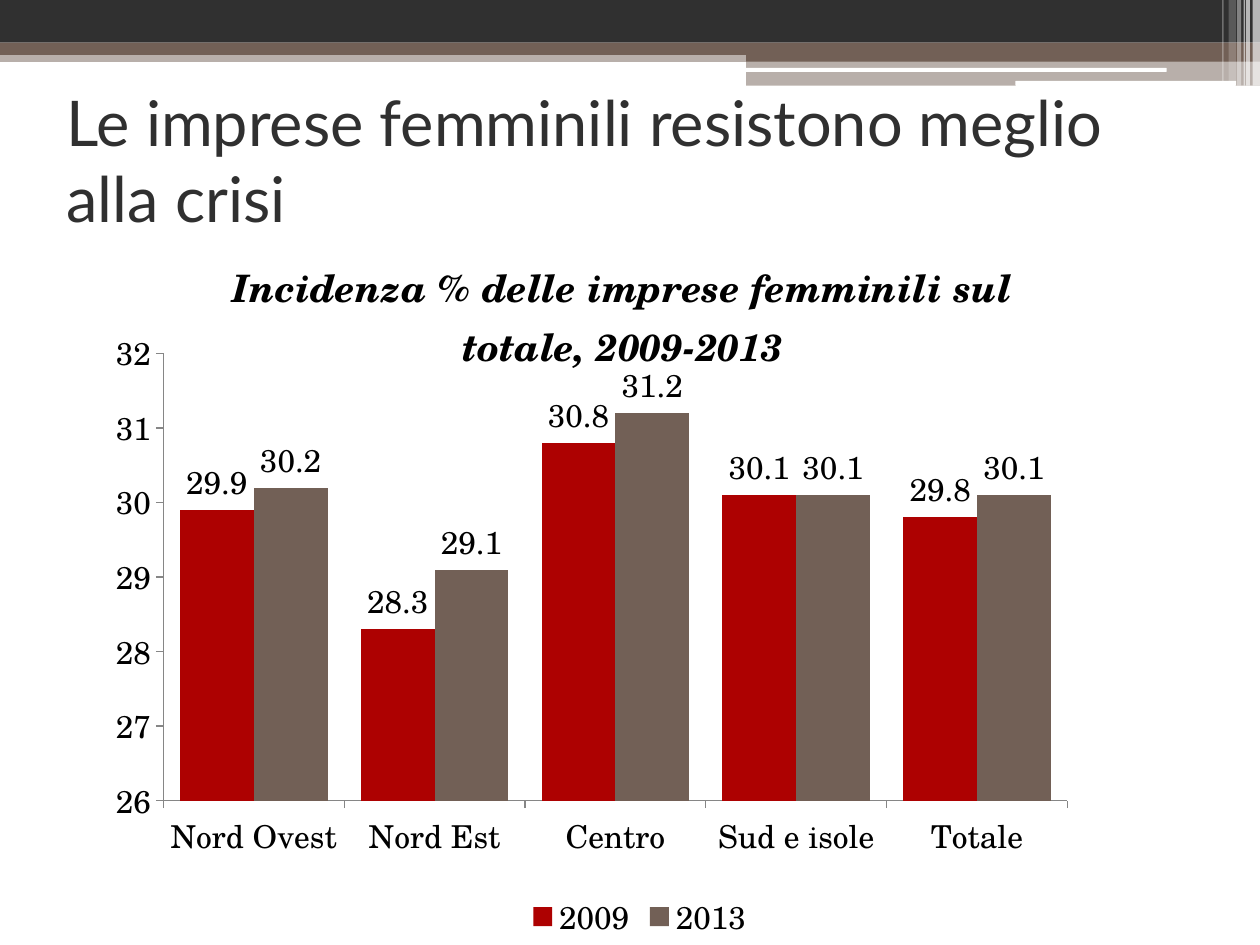
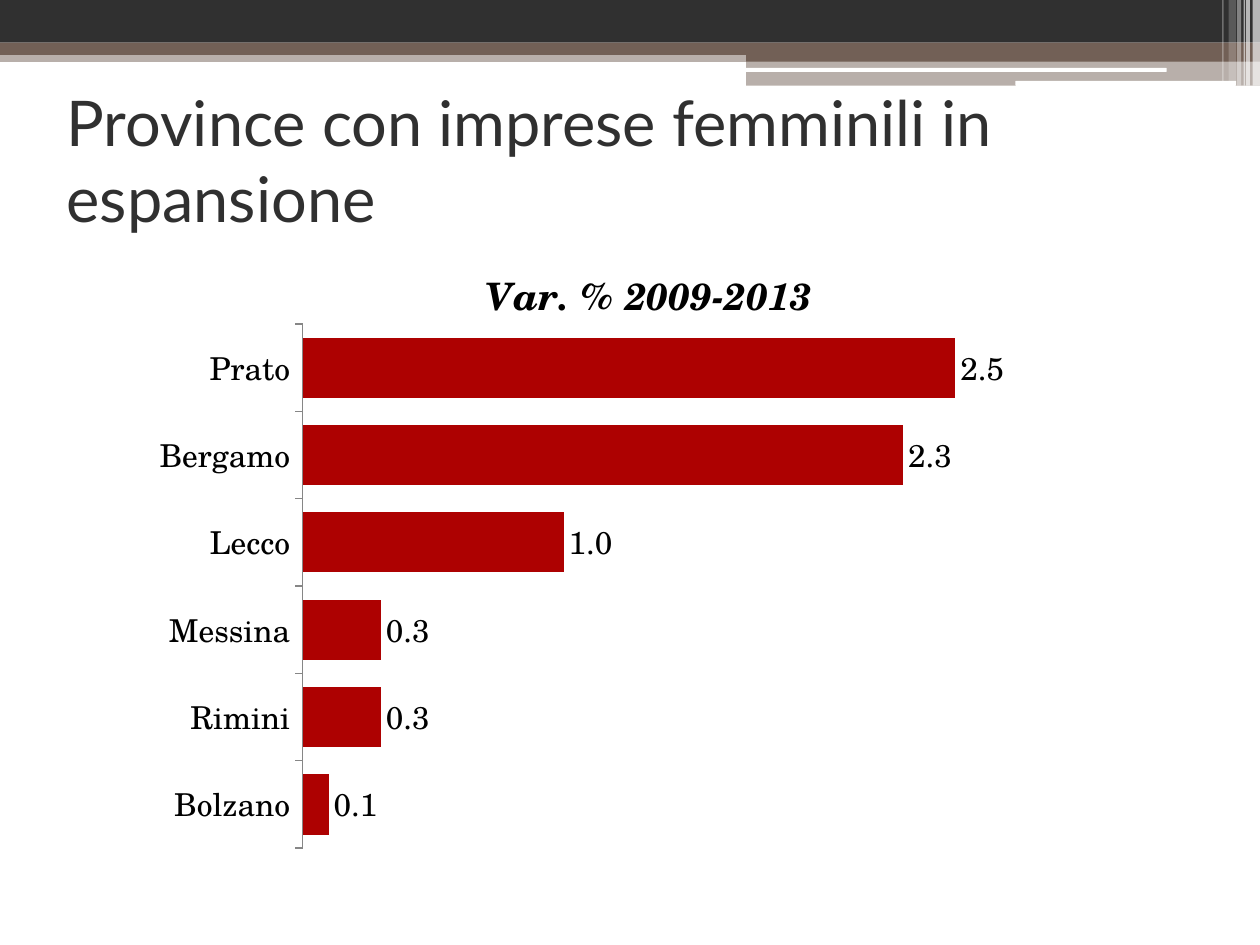
from dataclasses import dataclass

from lxml import etree
from pptx import Presentation
from pptx.chart.chart import Chart
from pptx.chart.data import CategoryChartData
from pptx.dml.color import RGBColor
from pptx.enum.chart import XL_CHART_TYPE as ChartType
from pptx.enum.chart import XL_LABEL_POSITION as LabelPosition
from pptx.enum.chart import XL_LEGEND_POSITION as LegendPosition
from pptx.enum.chart import XL_TICK_MARK as TickMark
from pptx.enum.shapes import MSO_SHAPE as Preset
from pptx.enum.text import MSO_ANCHOR as Anchor
from pptx.enum.text import MSO_AUTO_SIZE as AutoSize
from pptx.enum.text import PP_ALIGN as Align
from pptx.oxml.ns import qn
from pptx.slide import Slide, SlideLayout
from pptx.util import Cm, Pt

COLOURS = {
    "dark": "303030",
    "brown": "726056",
    "red": "AD0101",
    "white": "FFFFFF",
    "black": "000000",
    "axis": "868686",
}
TITLE_FONT = "Lato"
CHART_FONT = "TeX Gyre Schola"


@dataclass(frozen=True)
class Band:
    """A header bar; lengths in cm, opacity in percent."""
    left: float
    top: float
    width: float
    height: float
    colour: str
    opacity: int = 100
    rounded: bool = False


@dataclass(frozen=True)
class ChartSlide:
    """Content of a slide; boxes are fractions of the chart's size."""
    title: str
    chart_title: str
    title_corner: tuple[float, float]
    kind: ChartType
    categories: tuple[str, ...]
    series: dict[str, tuple[float, ...]]
    plot_box: tuple[float, float, float, float]
    value_range: tuple[float, float]
    show_values_axis: bool


BANDS = (
    Band(0, 1.02, 25.4, 0.23, "brown", 50),
    Band(0, 0, 25.4, 0.86, "dark"),
    Band(0, 0.86, 25.4, 0.25, "brown"),
    Band(15.04, 0.99, 10.36, 0.25, "brown"),
    Band(15.04, 1.22, 10.36, 0.51, "brown", 50),
    Band(15.01, 1.37, 8.51, 0.08, "white", rounded=True),
    Band(20.47, 1.63, 4.45, 0.1, "white", rounded=True),
    Band(25.25, 0, 0.15, 1.73, "white", 65),
    Band(25.12, 0, 0.08, 1.73, "white", 65),
    Band(25.07, 0, 0.03, 1.73, "white", 60),
    Band(24.94, 0, 0.08, 1.73, "white", 40),
    Band(24.77, 0, 0.15, 1.63, "white", 20),
    Band(24.64, 0, 0.03, 1.63, "white", 30),
)

SLIDES = (
    ChartSlide(
        title="Le imprese femminili resistono meglio alla crisi",
        chart_title="Incidenza % delle imprese femminili sul totale, 2009-2013",
        title_corner=(0.14, 0.07),
        kind=ChartType.COLUMN_CLUSTERED,
        categories=("Nord Ovest", "Nord Est", "Centro", "Sud e isole", "Totale"),
        series={
            "2009": (29.9, 28.3, 30.8, 30.1, 29.8),
            "2013": (30.2, 29.1, 31.2, 30.1, 30.1),
        },
        plot_box=(0.086, 0.212, 0.786, 0.595),
        value_range=(26, 32),
        show_values_axis=True,
    ),
    ChartSlide(
        title="Province con imprese femminili in espansione",
        chart_title="Var. % 2009-2013",
        title_corner=(0.36, 0.08),
        kind=ChartType.BAR_CLUSTERED,
        categories=("Bolzano", "Rimini", "Messina", "Lecco", "Bergamo", "Prato"),
        series={"Var. %": (0.1, 0.3, 0.3, 1.0, 2.3, 2.5)},
        plot_box=(0.207, 0.173, 0.681, 0.697),
        value_range=(0, 3),
        show_values_axis=False,
    ),
)


def colour(name: str) -> RGBColor:
    return RGBColor.from_string(COLOURS[name])


def add_band(page: Slide, layout: SlideLayout, band: Band) -> None:
    """Draw a band on the page, then move it to the shared layout."""
    preset = Preset.ROUNDED_RECTANGLE if band.rounded else Preset.RECTANGLE
    shape = page.shapes.add_shape(
        preset, Cm(band.left), Cm(band.top), Cm(band.width), Cm(band.height))
    shape.shadow.inherit = False
    shape.line.fill.background()
    shape.fill.solid()
    shape.fill.fore_color.rgb = colour(band.colour)
    if band.opacity < 100:
        tint = shape.element.find(".//" + qn("a:srgbClr"))
        etree.SubElement(tint, qn("a:alpha"), val=str(band.opacity * 1000))
    layout.shapes.element.append(shape.element)


def set_title(page: Slide, text: str) -> None:
    title = page.shapes.title
    title.left, title.top = Cm(1.09), Cm(1.73)
    title.width, title.height = Cm(22.86), Cm(2.97)
    frame = title.text_frame
    frame.text = text
    frame.auto_size = AutoSize.NONE
    frame.vertical_anchor = Anchor.MIDDLE
    para = frame.paragraphs[0]
    para.alignment = Align.LEFT
    para.font.name = TITLE_FONT
    para.font.size = Pt(36)
    para.font.color.rgb = colour("dark")


def set_layout(parent: etree._Element, index: int, **values: object) -> None:
    """Give a chart part a manual layout, placed at the child index."""
    for old in parent.findall(qn("c:layout")):
        parent.remove(old)
    layout = etree.Element(qn("c:layout"))
    manual = etree.SubElement(layout, qn("c:manualLayout"))
    for tag, value in values.items():
        etree.SubElement(manual, qn(f"c:{tag}"), val=str(value))
    parent.insert(index, layout)


def style_chart_title(chart: Chart, content: ChartSlide) -> None:
    frame = chart.chart_title.text_frame
    frame.text = content.chart_title
    font = frame.paragraphs[0].font
    font.name = CHART_FONT
    font.size = Pt(21.6)
    font.bold = font.italic = True
    font.color.rgb = colour("black")
    left, top = content.title_corner
    set_layout(chart.chart_title.element, 1,
               xMode="edge", yMode="edge", x=left, y=top)


def style_axes(chart: Chart, content: ChartSlide) -> None:
    values = chart.value_axis
    values.minimum_scale, values.maximum_scale = content.value_range
    values.major_unit = 1
    values.has_major_gridlines = False
    values.visible = content.show_values_axis
    values.tick_labels.number_format = "0"
    values.tick_labels.number_format_is_linked = False
    for axis in (values, chart.category_axis):
        axis.major_tick_mark = TickMark.OUTSIDE
        axis.minor_tick_mark = TickMark.NONE
        axis.format.line.color.rgb = colour("axis")
        axis.format.line.width = Pt(0.75)


def style_series(chart: Chart) -> None:
    plot = chart.plots[0]
    plot.gap_width = 45
    plot.vary_by_categories = False
    for series, name in zip(plot.series, ("red", "brown")):
        series.format.fill.solid()
        series.format.fill.fore_color.rgb = colour(name)
        series.invert_if_negative = False
        labels = series.data_labels
        labels.show_value = True
        labels.position = LabelPosition.OUTSIDE_END
        labels.number_format = "#,##0.0"
        labels.number_format_is_linked = False


def add_bar_chart(page: Slide, content: ChartSlide) -> None:
    data = CategoryChartData()
    data.categories = content.categories
    for name, values in content.series.items():
        data.add_series(name, values)
    chart = page.shapes.add_chart(
        content.kind, Cm(1.3), Cm(3.91), Cm(23.19), Cm(15.16), data).chart
    chart.font.name = CHART_FONT
    chart.font.size = Pt(18)
    chart.font.color.rgb = colour("black")
    style_chart_title(chart, content)
    style_axes(chart, content)
    style_series(chart)
    chart.has_legend = len(content.series) > 1
    if chart.has_legend:
        chart.legend.position = LegendPosition.BOTTOM
        chart.legend.include_in_layout = False
    left, top, width, height = content.plot_box
    set_layout(chart.element.find(".//" + qn("c:plotArea")), 0,
               layoutTarget="inner", xMode="edge", yMode="edge",
               x=left, y=top, w=width, h=height)


def main() -> None:
    deck = Presentation()
    deck.slide_width, deck.slide_height = Cm(25.4), Cm(19.05)
    layout = deck.slide_layouts.get_by_name("Title Only")
    pages = [deck.slides.add_slide(layout) for _ in SLIDES]
    for band in BANDS:
        add_band(pages[0], layout, band)
    for page, content in zip(pages, SLIDES):
        set_title(page, content.title)
        add_bar_chart(page, content)
    deck.save("out.pptx")


if __name__ == "__main__":
    main()
